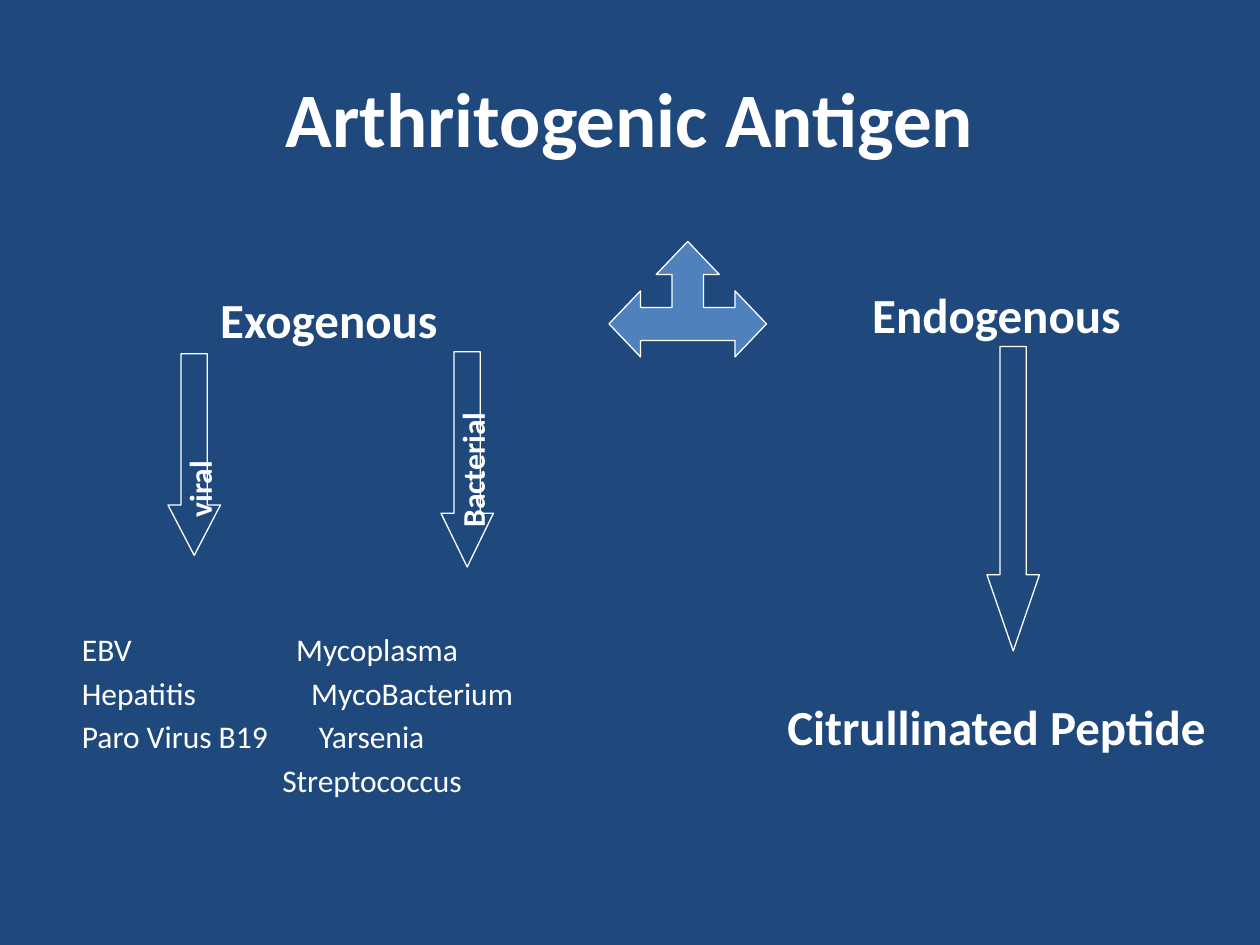
from lxml import etree
from pptx import Presentation
from pptx import util as u
from pptx.dml.color import RGBColor
from pptx.enum import shapes, text
from pptx.oxml.ns import qn

NAVY = RGBColor(0x1F, 0x49, 0x7D)
BLUE = RGBColor(0x4F, 0x81, 0xBD)
WHITE = RGBColor(0xFF, 0xFF, 0xFF)

# Square grid of 120 columns by 90 rows
deck = Presentation()
deck.slide_width, deck.slide_height = u.Inches(10), u.Inches(7.5)
CELL = deck.slide_width / 120
page = deck.slides.add_slide(deck.slide_layouts[6])
page.background.fill.solid()
page.background.fill.fore_color.rgb = NAVY


def grid(*cells):
    return [round(cell * CELL) for cell in cells]


def write(para, wording, size, bold=True, align=text.PP_ALIGN.CENTER, before=0):
    para.text = wording
    para.alignment = align
    para.space_before = u.Pt(before)
    para.font.name, para.font.size, para.font.bold = "Calibri", u.Pt(size), bold
    para.font.color.rgb = WHITE


# Title and the two columns of text
frames = []
for area in [(6, 3.6, 108, 15), (0, 27, 56, 54.4), (72.2, 26.5, 45.4, 54)]:
    frame = page.shapes.add_textbox(*grid(*area)).text_frame
    frame.word_wrap = True
    frames.append(frame)
title, exogenous, endogenous = frames

title.vertical_anchor = text.MSO_ANCHOR.MIDDLE
write(title.paragraphs[0], "Arthritogenic Antigen", 44)

write(endogenous.paragraphs[0], "Endogenous", 28)
write(endogenous.add_paragraph(), "Citrullinated Peptide", 28, before=202)

exogenous.margin_left = u.Inches(0.65)
write(exogenous.paragraphs[0], "Exogenous", 28)

# Viral and bacterial agents: each row has its own tab stop, in inches
agents = [
    ("EBV", "Mycoplasma", 1.7, 161),
    ("Hepatitis", "MycoBacterium", 1.82, 3.2),
    ("Paro Virus B19", "Yarsenia", 1.88, 3.2),
    ("", "Streptococcus", 1.59, 3.2),
]
for virus, bacterium, stop, before in agents:
    para = exogenous.add_paragraph()
    para.alignment = text.PP_ALIGN.LEFT
    para.space_before = u.Pt(before)
    properties = para._p.get_or_add_pPr()
    tabs = etree.SubElement(properties, qn("a:tabLst"))
    etree.SubElement(tabs, qn("a:tab"), pos=str(u.Inches(stop)), algn="l")
    write(para, f"{virus}\t{bacterium}", 18, False, text.PP_ALIGN.LEFT, before)

# Three-way arrow, 10 steps wide and 7 steps high
left, top, width, height = grid(58, 23, 15, 11)
outline = [(5, 0), (3, 2), (4, 2), (4, 4), (2, 4), (2, 3), (0, 5), (2, 7), (2, 6),
           (8, 6), (8, 7), (10, 5), (8, 3), (8, 4), (6, 4), (6, 2), (7, 2)]
points = [(left + x * width / 10, top + y * height / 7) for x, y in outline]
builder = page.shapes.build_freeform(*points[0])
builder.add_line_segments(points[1:], close=True)
arrows = [(builder.convert_to_shape(), BLUE)]

# Down arrows; each head takes a quarter of the height
for column, row, rows, label in [
    (16, 33.7, 19.2, "viral"),
    (42, 33.5, 20.5, "Bacterial"),
    (94, 33, 29, None),
]:
    arrow = page.shapes.add_shape(
        shapes.MSO_SHAPE.DOWN_ARROW, *grid(column, row, 5, rows))
    arrow.adjustments[0], arrow.adjustments[1] = 0.5, rows / 4 / 5
    arrows.append((arrow, NAVY))
    if label:
        frame = arrow.text_frame
        frame.word_wrap = True
        frame.vertical_anchor = text.MSO_ANCHOR.MIDDLE
        frame.margin_left, frame.margin_right = u.Inches(0.08), 0
        frame.margin_top = frame.margin_bottom = u.Inches(0.1)
        frame._txBody.bodyPr.set("vert", "vert270")
        write(frame.paragraphs[0], label, 18, align=text.PP_ALIGN.LEFT)

for arrow, colour in arrows:
    arrow.shadow.inherit = False
    arrow.fill.solid()
    arrow.fill.fore_color.rgb = colour
    arrow.line.color.rgb = WHITE
    arrow.line.width = u.Pt(0.75)

deck.save("out.pptx")
